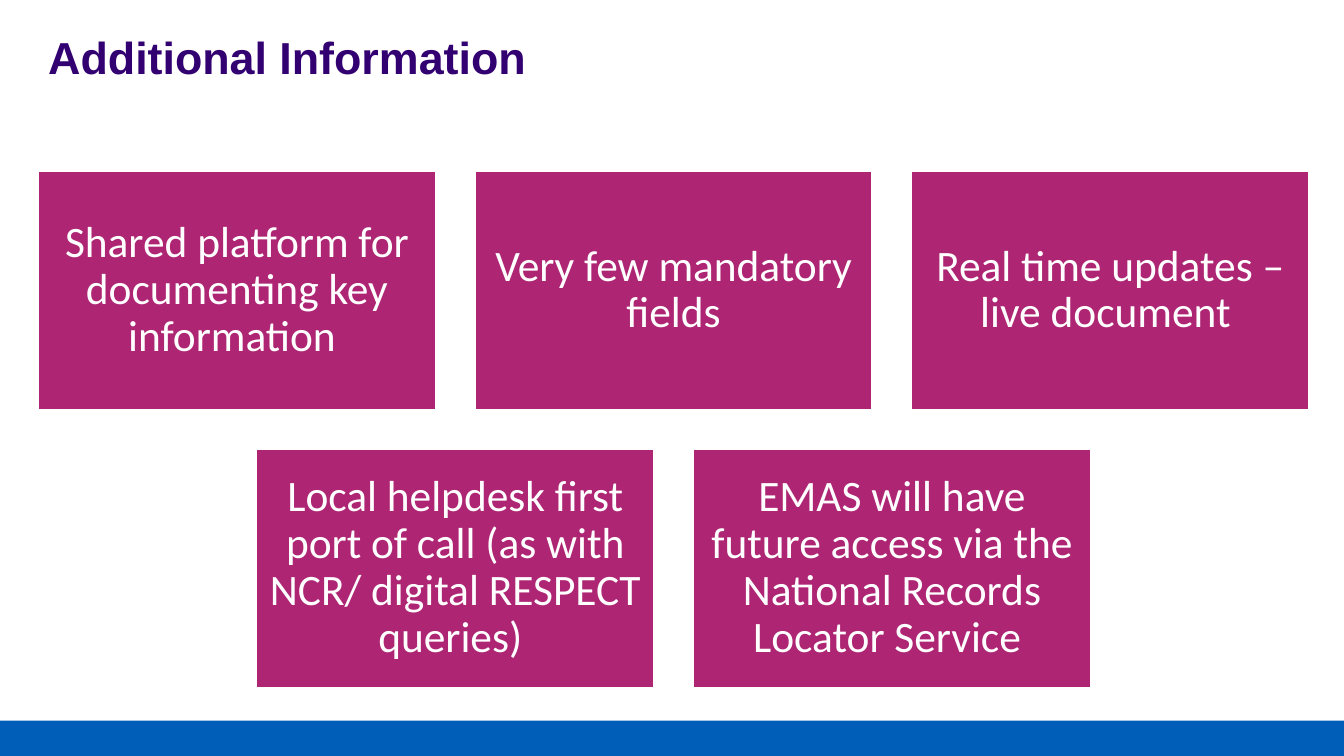
from pptx import Presentation
from pptx.dml.color import RGBColor
from pptx.enum.shapes import MSO_SHAPE
from pptx.enum.text import MSO_ANCHOR, PP_ALIGN
from pptx.util import Inches, Pt

WIDE, HIGH = 13.33, 7.5
ROWS = [
    ["Shared platform for documenting key information ",
     "Very few mandatory fields",
     "Real time updates – live document "],
    ["Local helpdesk first port of call (as with NCR/ digital RESPECT queries) ",
     "EMAS will have future access via the National Records Locator Service "],
]


def paint(target, color):
    """Colour a fill or a font from a hex string."""
    if hasattr(target, "solid"):
        target.solid()
        target.fore_color.rgb = RGBColor.from_string(color)
    else:
        target.color.rgb = RGBColor.from_string(color)


def write(shape, text, font, size, color, align, inset, bold=False):
    frame = shape.text_frame
    frame.word_wrap = True
    frame.vertical_anchor = MSO_ANCHOR.MIDDLE
    frame.margin_left = frame.margin_right = Inches(inset)
    frame.margin_top = frame.margin_bottom = Inches(min(inset, 0.13))
    frame.text = text
    para = frame.paragraphs[0]
    para.alignment = align
    para.line_spacing = 0.9
    for run in para.runs:
        run.font.name, run.font.size, run.font.bold = font, Pt(size), bold
        paint(run.font, color)


def block(slide, box, color):
    """Add a plain filled rectangle."""
    shape = slide.shapes.add_shape(MSO_SHAPE.RECTANGLE, *map(Inches, box))
    shape.shadow.inherit = False
    paint(shape.fill, color)
    shape.line.fill.background()
    return shape


def title(slide, box, text):
    shape = slide.shapes.add_textbox(*map(Inches, box))
    write(shape, text, "Arial", 32, "330072", PP_ALIGN.LEFT, 0.1, True)


def cards(slide, box, rows):
    """Place each row of cards centred in the box, with equal gaps."""
    left, top, width, height = box
    cols = max(map(len, rows))
    gap = width / 32
    wide = (width - gap * (cols - 1)) / cols
    tall = (height - gap * (len(rows) - 1)) / len(rows)
    for r, row in enumerate(rows):
        start = left + (cols - len(row)) * (wide + gap) / 2
        for c, text in enumerate(row):
            place = (start + c * (wide + gap), top + r * (tall + gap), wide, tall)
            card = block(slide, place, "AE2573")
            paint(card.line.fill, "FFFFFF")
            card.line.width = Pt(1)
            write(card, text, "Calibri", 31, "FFFFFF", PP_ALIGN.CENTER, 0.13)


def main():
    deck = Presentation()
    deck.slide_width, deck.slide_height = Inches(WIDE), Inches(HIGH)
    slide = deck.slides.add_slide(deck.slide_layouts[6])
    # Footer band
    block(slide, (0, 7.15, WIDE, HIGH - 7.15), "005EB8")
    # Heading
    title(slide, (0.38, 0.24, 9.84, 0.71), "Additional Information")
    # Key points
    cards(slide, (0.38, 1.7, 12.6, 5.12), ROWS)
    deck.save("out.pptx")


if __name__ == "__main__":
    main()
